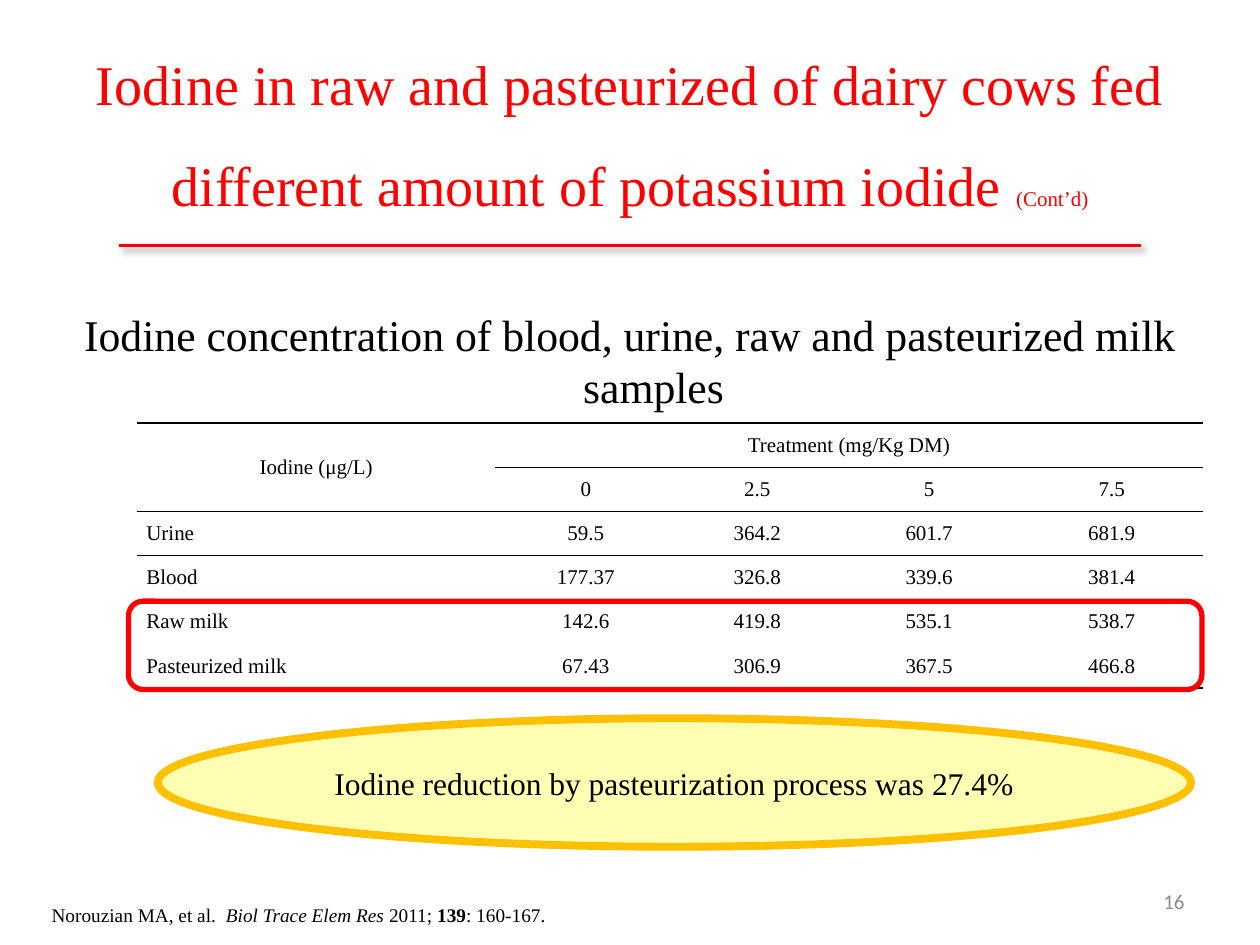
from lxml import etree
from pptx import Presentation
from pptx.dml.color import RGBColor
from pptx.enum.shapes import MSO_CONNECTOR, MSO_SHAPE
from pptx.enum.text import MSO_ANCHOR, MSO_AUTO_SIZE, PP_ALIGN
from pptx.oxml import parse_xml
from pptx.oxml.ns import nsdecls, qn
from pptx.util import Cm, Pt

LEFT, CENTER, RIGHT = PP_ALIGN.LEFT, PP_ALIGN.CENTER, PP_ALIGN.RIGHT
TOP, MIDDLE = MSO_ANCHOR.TOP, MSO_ANCHOR.MIDDLE
STRAIGHT = MSO_CONNECTOR.STRAIGHT
ROUNDED, OVAL = MSO_SHAPE.ROUNDED_RECTANGLE, MSO_SHAPE.OVAL
TITLE_ONLY = 5
SERIF, SANS = "Times New Roman", "Calibri"
RED, BLACK, GRAY, AMBER, CREAM = "FF0000", "000000", "8C8C8C", "FFC000", "FFFFB3"
NO_STYLE = "{2D5ABB26-0587-4C30-8999-92F81FD0307C}"

COLUMN_WIDTHS = [7.21, 3.66, 3.25, 3.68, 3.68]
ROW_HEIGHT = 0.89
ROWS = [
    ["Iodine (μg/L)", "Treatment (mg/Kg DM)", "", "", ""],
    ["", "0", "2.5", "5", "7.5"],
    ["Urine", "59.5", "364.2", "601.7", "681.9"],
    ["Blood", "177.37", "326.8", "339.6", "381.4"],
    ["Raw milk", "142.6", "419.8", "535.1", "538.7"],
    ["Pasteurized milk", "67.43", "306.9", "367.5", "466.8"],
]
HEADER_ROWS = 2
RULES = {(0, "lnT"), (0, "lnB"), (1, "lnT"), (1, "lnB"), (2, "lnT"), (5, "lnB")}


def color(value):
    """Turn a hex string into a colour."""
    return RGBColor.from_string(value)


def box(*lengths):
    """Turn left, top, width and height in centimetres into lengths."""
    return [Cm(length) for length in lengths]


class SlideBuilder:
    """Hold the style and the current slide."""

    def __init__(self, presentation):
        """Add a title-only slide."""
        self.slide = presentation.slides.add_slide(presentation.slide_layouts[TITLE_ONLY])
        self.shapes = self.slide.shapes

    def format(self, paragraph, size, ink=BLACK, align=CENTER, font=SERIF):
        """Set the font and alignment of a paragraph."""
        paragraph.alignment = align
        paragraph.font.name = font
        paragraph.font.size = Pt(size)
        paragraph.font.color.rgb = color(ink)

    def title(self, text, suffix, place):
        """Fill the title and add its small suffix."""
        title = self.shapes.title
        title.left, title.top, title.width, title.height = box(*place)
        frame = title.text_frame
        frame.auto_size = MSO_AUTO_SIZE.NONE
        frame.vertical_anchor = MIDDLE
        paragraph = frame.paragraphs[0]
        paragraph.line_spacing = 1.5
        paragraph.add_run().text = text
        small = paragraph.add_run()
        small.text = suffix
        small.font.size = Pt(12)
        self.format(paragraph, 32, RED)

    def text(self, runs, place, size, ink=BLACK, align=LEFT, font=SERIF, anchor=TOP, hanging=0):
        """Add a text box of (text, bold, italic) runs."""
        frame = self.shapes.add_textbox(*box(*place)).text_frame
        frame.word_wrap = True
        frame.vertical_anchor = anchor
        paragraph = frame.paragraphs[0]
        if hanging:
            properties = paragraph._p.get_or_add_pPr()
            properties.set("marL", str(Cm(hanging)))
            properties.set("indent", str(-Cm(hanging)))
        for words, bold, italic in runs:
            run = paragraph.add_run()
            run.text = words
            run.font.bold = bold
            run.font.italic = italic
        self.format(paragraph, size, ink, align, font)

    def rule(self, left, right, top):
        """Draw a horizontal line with a soft shadow."""
        line = self.shapes.add_connector(STRAIGHT, *box(left, top, right, top))
        line.line.color.rgb = color(RED)
        line.line.width = Pt(1.75)
        line._element.spPr.append(parse_xml(
            f'<a:effectLst {nsdecls("a")}><a:outerShdw blurRad="{Pt(4)}" dist="{Pt(3)}" '
            f'dir="2700000" algn="tl" rotWithShape="0"><a:srgbClr val="{BLACK}">'
            '<a:alpha val="40000"/></a:srgbClr></a:outerShdw></a:effectLst>'))

    def shape(self, kind, place, outline, width, fill=None, text=None):
        """Add an outlined shape with optional fill and text."""
        shape = self.shapes.add_shape(kind, *box(*place))
        shape.shadow.inherit = False
        shape.line.color.rgb = color(outline)
        shape.line.width = Pt(width)
        if fill:
            shape.fill.solid()
            shape.fill.fore_color.rgb = color(fill)
        else:
            shape.fill.background()
        if text:
            shape.text_frame.text = text
            shape.text_frame.vertical_anchor = MIDDLE
            self.format(shape.text_frame.paragraphs[0], 18)

    def border(self, cell, side):
        """Draw one black cell border."""
        line = etree.SubElement(cell._tc.get_or_add_tcPr(), qn(f"a:{side}"), w=str(Pt(1)))
        fill = etree.SubElement(line, qn("a:solidFill"))
        etree.SubElement(fill, qn("a:srgbClr"), val=BLACK)

    def table(self, left, top):
        """Add the iodine table with its horizontal rules."""
        size = box(left, top, sum(COLUMN_WIDTHS), ROW_HEIGHT * len(ROWS))
        table = self.shapes.add_table(len(ROWS), len(COLUMN_WIDTHS), *size).table
        table.first_row = table.horz_banding = False
        table._tbl.tblPr.find(qn("a:tableStyleId")).text = NO_STYLE
        for column, width in zip(table.columns, COLUMN_WIDTHS):
            column.width = Cm(width)
        for row_index, values in enumerate(ROWS):
            table.rows[row_index].height = Cm(ROW_HEIGHT)
            for column_index, value in enumerate(values):
                cell = table.cell(row_index, column_index)
                cell.margin_left = cell.margin_right = Cm(0.18)
                cell.margin_top = cell.margin_bottom = 0
                cell.vertical_anchor = MIDDLE
                cell.text = value
                is_label = column_index == 0 and row_index >= HEADER_ROWS
                self.format(cell.text_frame.paragraphs[0], 12, align=LEFT if is_label else CENTER)
                for side in ("lnT", "lnB"):
                    inside_merge = column_index == 0 and (row_index, side) in {(0, "lnB"), (1, "lnT")}
                    if (row_index, side) in RULES and not inside_merge:
                        self.border(cell, side)
                cell.fill.background()
        table.cell(0, 0).merge(table.cell(1, 0))
        table.cell(0, 1).merge(table.cell(0, 4))


def main():
    """Build and save the iodine slide."""
    presentation = Presentation()
    presentation.slide_width, presentation.slide_height = Cm(25.4), Cm(19.05)
    builder = SlideBuilder(presentation)
    builder.title("Iodine in raw and pasteurized of dairy cows fed different amount of potassium iodide ",
                  "(Cont’d)", (1.27, 0.76, 22.86, 3.18))
    builder.text([("Iodine concentration of blood, urine, raw and pasteurized milk samples", None, None)],
                 (1.27, 6.07, 22.86, 2.4), 25, align=CENTER, hanging=0.95)
    builder.rule(2.39, 23.01, 4.95)
    builder.text([("Norouzian MA, et al.  ", None, None), ("Biol Trace Elem Res ", None, True),
                  ("2011; ", None, None), ("139", True, None), (": 160-167.", None, None)],
                 (0.79, 18.08, 15.88, 0.74), 11)
    builder.table(2.77, 8.53)
    builder.shape(ROUNDED, (2.59, 12.12, 21.64, 1.78), RED, 3)
    builder.shape(OVAL, (3.18, 14.48, 20.83, 2.59), AMBER, 4.5, CREAM,
                  "Iodine reduction by pasteurization process was 27.4%")
    builder.text([("16", None, None)], (18.21, 17.65, 5.92, 1.02), 12, GRAY, RIGHT, SANS, MIDDLE)
    presentation.save("out.pptx")


if __name__ == "__main__":
    main()
